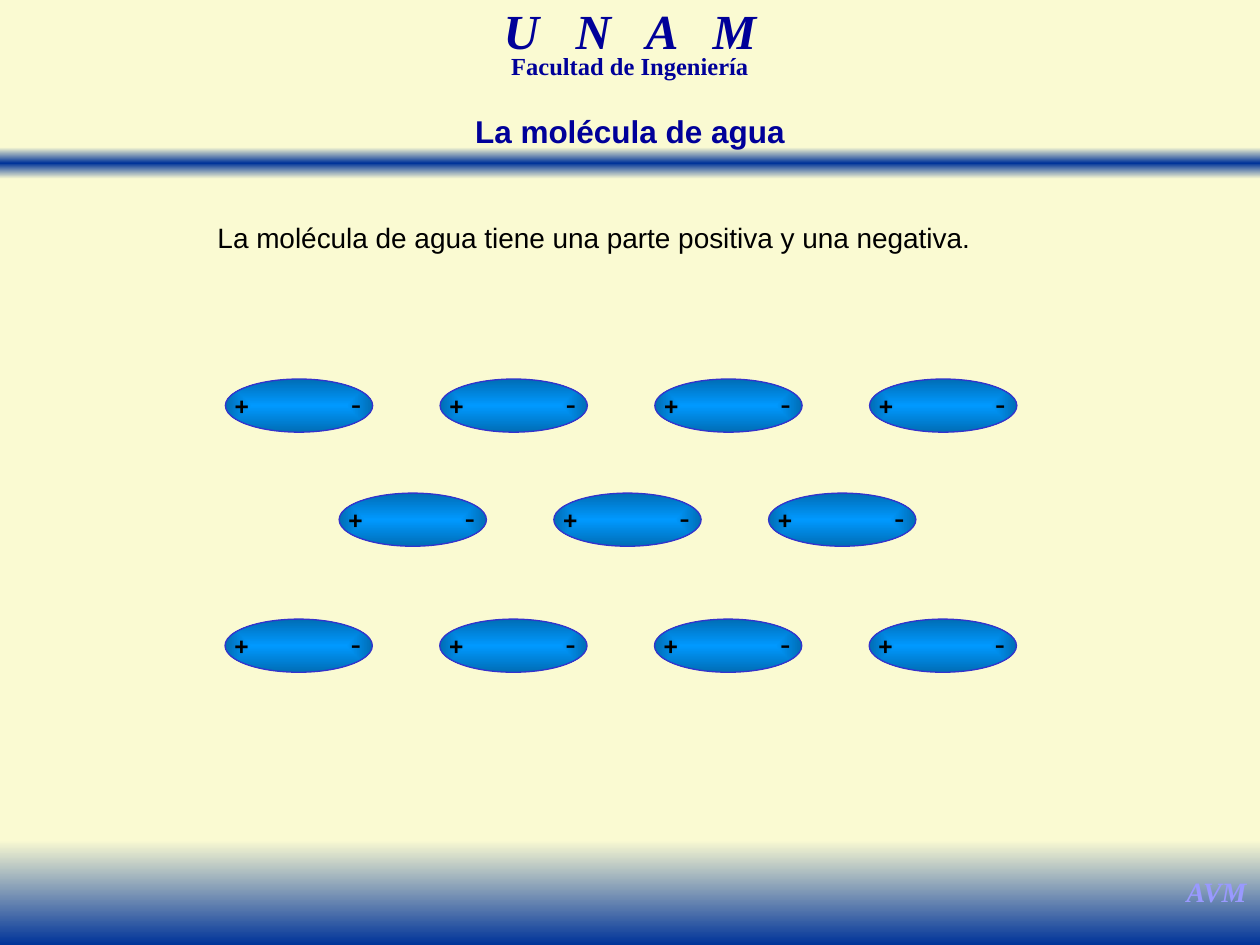
from pptx import Presentation
from pptx.dml.color import RGBColor
from pptx.enum.shapes import MSO_SHAPE
from pptx.enum.text import MSO_ANCHOR, PP_ALIGN
from pptx.oxml import parse_xml
from pptx.oxml.ns import nsdecls, qn
from pptx.util import Pt

CREAM, DEEP_BLUE, NAVY, BLACK = "FAFAD2", "003399", "000099", "000000"
SERIF, SANS = "Times New Roman", "Arial"
LINEAR = '<a:lin ang="5400000" scaled="1"/>'
FROM_CENTRE = ('<a:path path="rect"><a:fillToRect l="50000" t="50000" '
               'r="50000" b="50000"/></a:path>')


def add_gradient_shape(shapes, kind, left, top, width, height, stops, direction):
    shape = shapes.add_shape(kind, Pt(left), Pt(top), Pt(width), Pt(height))
    shape.shadow.inherit = False
    stop_xml = "".join(f'<a:gs pos="{pos * 1000}"><a:srgbClr val="{color}"/></a:gs>'
                       for pos, color in stops)
    shape.element.spPr.find(qn("a:prstGeom")).addnext(parse_xml(
        f'<a:gradFill {nsdecls("a")} rotWithShape="1"><a:gsLst>{stop_xml}</a:gsLst>'
        f'{direction}</a:gradFill>'))
    shape.line.fill.background()
    return shape


def write(box, text, size, font, color, bold=False, italic=False,
          align=PP_ALIGN.CENTER, wrap=True):
    box.text_frame.word_wrap = wrap
    box.text_frame.vertical_anchor = MSO_ANCHOR.TOP
    paragraph = box.text_frame.paragraphs[0]
    paragraph.alignment = align
    run = paragraph.add_run()
    run.text = text
    run.font.size = Pt(size)
    run.font.name = font
    run.font.bold = bold
    run.font.italic = italic
    run.font.color.rgb = RGBColor.from_string(color)
    return paragraph


prs = Presentation()
prs.slide_width, prs.slide_height = Pt(720), Pt(540)
slide = prs.slides.add_slide(prs.slide_layouts[5])
shapes = slide.shapes
slide.background.fill.solid()
slide.background.fill.fore_color.rgb = RGBColor.from_string(CREAM)

# Bands under the header and at the foot
add_gradient_shape(shapes, MSO_SHAPE.RECTANGLE, 0, 84.2, 720, 18,
                   [(0, CREAM), (50, DEEP_BLUE), (100, CREAM)], LINEAR)
add_gradient_shape(shapes, MSO_SHAPE.RECTANGLE, 0, 480, 720, 60,
                   [(0, CREAM), (100, DEEP_BLUE)], LINEAR)

# School header: wide letter spacing on all but the last letter
university = shapes.add_textbox(Pt(219), Pt(5.8), Pt(282), Pt(31))
write(university, "U N A ", 28, SERIF, NAVY, True, True)
header = write(university, "M", 28, SERIF, NAVY, True, True)
header.line_spacing = 0.7
header.runs[0].font._element.set("spc", "700")

faculty = shapes.add_textbox(Pt(231), Pt(30.2), Pt(258), Pt(18.7))
write(faculty, "Facultad de Ingeniería", 14, SERIF, NAVY, True).line_spacing = 0.7

# Author's initials
initials = shapes.add_textbox(Pt(670.3), Pt(496), Pt(49.7), Pt(26.6))
write(initials, "AVM", 16, SERIF, "9999FF", True, True, wrap=False)

# Statement
statement = shapes.add_textbox(Pt(102.2), Pt(116.6), Pt(498.2), Pt(29.5))
sentence = write(statement, "La molécula de agua tiene una parte positiva y una negativa.",
                 16, SANS, BLACK, align=PP_ALIGN.JUSTIFY)
sentence.line_spacing = 1.3
sentence._p.get_or_add_pPr().set("marL", str(Pt(15)))

# Water molecules in staggered rows, each with a positive and a negative end
PITCH = 122.7
for row_left, top, count in [(128.8, 216.6, 4), (193.8, 281.8, 3), (128.6, 353.8, 4)]:
    for column in range(count):
        left = row_left + column * PITCH
        molecule = shapes.add_group_shape().shapes
        body = add_gradient_shape(molecule, MSO_SHAPE.OVAL, left, top, 84.2, 30.4,
                                  [(0, "0099FF"), (100, "006DB5")], FROM_CENTRE)
        body.line.color.rgb = RGBColor.from_string("3333CC")
        body.line.width = Pt(0.75)
        positive = molecule.add_textbox(Pt(left - 1.8), Pt(top + 3.2), Pt(22.3), Pt(24))
        write(positive, "+", 14, SANS, BLACK, True, wrap=False)
        negative = molecule.add_textbox(Pt(left + 64.6), Pt(top - 0.9), Pt(20.2), Pt(29))
        write(negative, "-", 18, SANS, BLACK, wrap=False)

# Title, in front of the band
title = shapes.title
title.left, title.top, title.width, title.height = Pt(204), Pt(60.5), Pt(312), Pt(29)
write(title, "La molécula de agua", 18, SANS, NAVY, True)
title.element.getparent().append(title.element)

prs.save("out.pptx")
